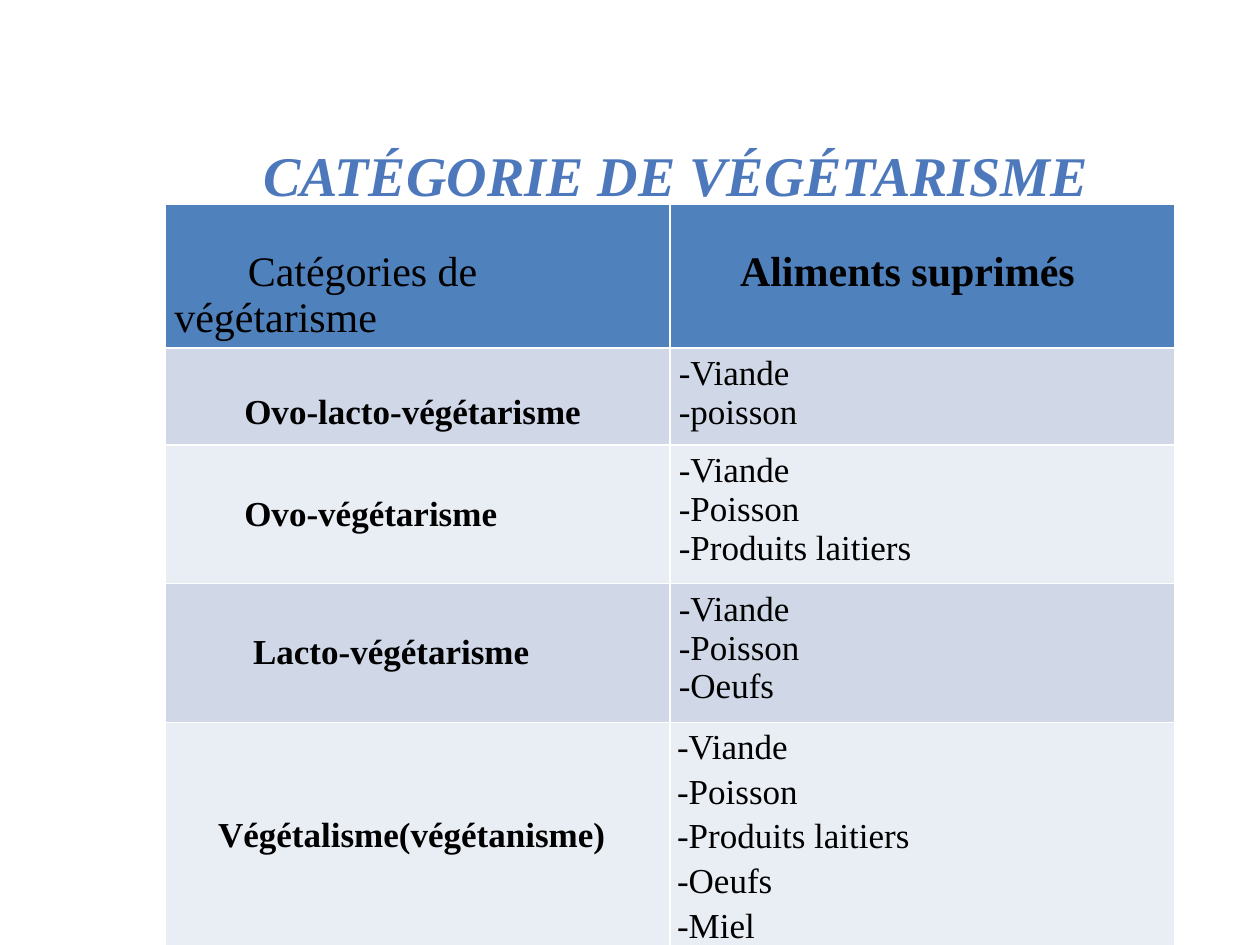
"""Build the slide on the categories of vegetarianism."""
import pptx
import pptx.dml.color
import pptx.enum.text
import pptx.util

Pt = pptx.util.Pt
RGBColor = pptx.dml.color.RGBColor
ANCHOR = pptx.enum.text.MSO_ANCHOR

FONT = "Times New Roman"
TITLE_BLUE = RGBColor(0x4D, 0x79, 0xBC)
HEADER_BLUE = RGBColor(0x4F, 0x81, 0xBD)
BAND_DARK = RGBColor(0xD0, 0xD8, 0xE8)
BAND_LIGHT = RGBColor(0xE9, 0xED, 0xF4)
BLACK = RGBColor(0, 0, 0)


def add_run(p, text, size, color, bold, italic=False):
    r = p.add_run()
    r.text = text
    r.font.name = FONT
    r.font.size = Pt(size)
    r.font.bold = bold
    r.font.italic = italic
    r.font.color.rgb = color


def fill_cell(cell, lines, size, bold, color, indent=0, anchor=ANCHOR.TOP,
              top=3.6, side=5, bottom=3.6, spacing=1.0):
    cell.fill.solid()
    cell.fill.fore_color.rgb = color
    cell.vertical_anchor = anchor
    cell.margin_left = cell.margin_right = Pt(side)
    cell.margin_top = Pt(top)
    cell.margin_bottom = Pt(bottom)
    tf = cell.text_frame
    for i, line in enumerate(lines):
        p = tf.add_paragraph() if i else tf.paragraphs[0]
        p.line_spacing = spacing
        p._p.get_or_add_pPr().set("indent", str(Pt(indent)))
        add_run(p, line, size, BLACK, bold)


prs = pptx.Presentation()
prs.slide_width = Pt(720)
prs.slide_height = Pt(540)
s = prs.slides.add_slide(prs.slide_layouts[6])

sp = s.shapes.add_textbox(Pt(93.6), Pt(49), Pt(585.4), Pt(100.8))
tf = sp.text_frame
tf.word_wrap = True
tf.vertical_anchor = ANCHOR.MIDDLE
p = tf.paragraphs[0]
p.alignment = pptx.enum.text.PP_ALIGN.CENTER
add_run(p, "CATÉGORIE DE VÉGÉTARISME", 32, TITLE_BLUE, True, True)

categories = [
    ("Ovo-lacto-végétarisme", 40, ANCHOR.BOTTOM, 7.6, ["-Viande", "-poisson"]),
    ("Ovo-végétarisme", 40, ANCHOR.MIDDLE, 3.6, ["-Viande", "-Poisson", "-Produits laitiers"]),
    ("Lacto-végétarisme", 45, ANCHOR.MIDDLE, 3.6, ["-Viande", "-Poisson", "-Oeufs"]),
    ("Végétalisme(végétanisme)", 25, ANCHOR.MIDDLE, 12.6,
     ["-Viande", "-Poisson", "-Produits laitiers", "-Oeufs", "-Miel"]),
]
row_heights = [82.3, 55.4, 66, 55.4, 80.6]

table = s.shapes.add_table(len(row_heights), 2, Pt(94.6), Pt(116.6),
                           Pt(576.6), Pt(sum(row_heights))).table
for column in table.columns:
    column.width = Pt(288.3)
for row, height in zip(table.rows, row_heights):
    row.height = Pt(height)

fill_cell(table.cell(0, 0), ["Catégories de végétarisme"], 24, False, HEADER_BLUE,
          42, ANCHOR.BOTTOM)
fill_cell(table.cell(0, 1), ["Aliments suprimés"], 24, True, HEADER_BLUE,
          35, ANCHOR.MIDDLE, bottom=8)

for i, (name, indent, anchor, bottom, foods) in enumerate(categories, 1):
    color = BAND_DARK if i % 2 else BAND_LIGHT
    fill_cell(table.cell(i, 0), [name], 20, True, color, indent, anchor, bottom=bottom)
    if i == len(categories):
        fill_cell(table.cell(i, 1), foods, 20, False, color,
                  top=0, side=4, bottom=0, spacing=1.15)
    else:
        fill_cell(table.cell(i, 1), foods, 20, False, color)

prs.save("out.pptx")
